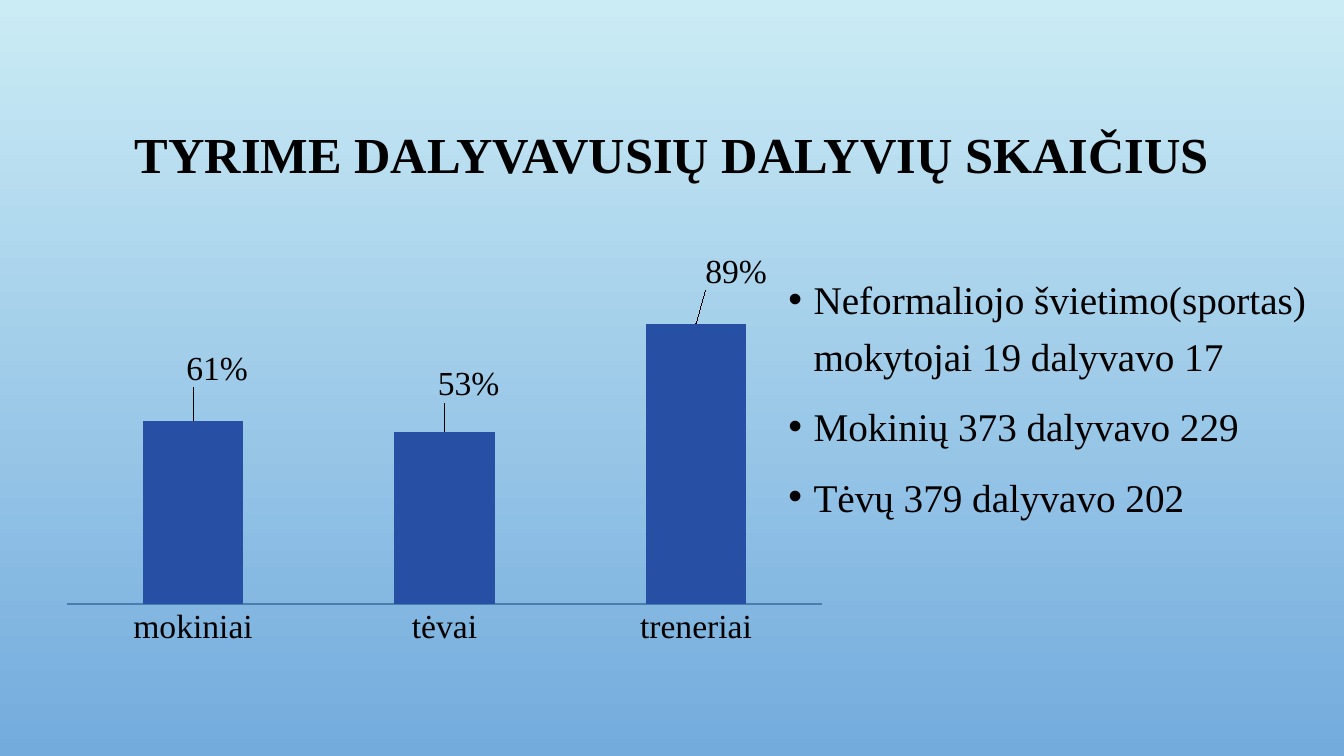
"""Build a slide with survey participation rates by group."""
from lxml import etree
from pptx import Presentation
from pptx.chart.data import CategoryChartData
from pptx.dml.color import RGBColor
from pptx.enum import chart as ch, text
from pptx.oxml import ns
from pptx.util import Inches, Pt

FONT = "Times New Roman"
COLORS = {"sky": "CBECF5", "blue": "73ABDD", "bar": "274FA4",
          "axis": "4A7EAE", "text": "000000"}
GROUPS = [("mokiniai", 0.51, "61%", (0.03, -0.06)),
          ("tėvai", 0.48, "53%", (0.03, -0.05)),
          ("treneriai", 0.78, "89%", (0.05, -0.06))]
COUNTS = ["Neformaliojo švietimo(sportas) mokytojai 19 dalyvavo 17",
          "Mokinių 373 dalyvavo 229",
          "Tėvų 379 dalyvavo 202"]


def rgb(name):
    return RGBColor.from_string(COLORS[name])


def style(font, size, bold=False):
    font.name, font.size, font.bold = FONT, Pt(size), bold
    font.color.rgb = rgb("text")


def paint_background(s):
    fill = s.background.fill
    fill.gradient()
    fill.gradient_angle = 270
    for stop, name in zip(fill.gradient_stops, ("sky", "blue")):
        stop.color.rgb = rgb(name)


def add_text(s, box, lines, size, bold=False):
    tf = s.shapes.add_textbox(*map(Inches, box)).text_frame
    tf.word_wrap = True
    tf.text = "\n".join(lines)
    for p in tf.paragraphs:
        for r in p.runs:
            style(r.font, size, bold)
    return tf


def add_title(s, title):
    tf = add_text(s, (1, 0.68, 11.33, 1.75), [title], 36, True)
    tf.vertical_anchor = text.MSO_ANCHOR.MIDDLE
    p = tf.paragraphs[0]
    p.alignment = text.PP_ALIGN.CENTER
    p.line_spacing = 0.9


def add_bullets(s, lines):
    tf = add_text(s, (7.72, 2.59, 5.51, 3.74), lines, 28)
    for i, p in enumerate(tf.paragraphs):
        p.line_spacing = 1.2
        p.space_before = Pt(10 if i else 0)
        pPr = p._p.get_or_add_pPr()
        pPr.set("marL", str(Inches(0.25)))
        pPr.set("indent", str(Inches(-0.25)))
        color = etree.SubElement(pPr, ns.qn("a:buClr"))
        etree.SubElement(color, ns.qn("a:srgbClr"), val=COLORS["text"])
        etree.SubElement(pPr, ns.qn("a:buFont"), typeface="Arial")
        etree.SubElement(pPr, ns.qn("a:buChar"), char="•")


def set_layout(parent, index, values):
    """Place a chart part by hand, replacing any earlier layout."""
    for old in parent.findall(ns.qn("c:layout")):
        parent.remove(old)
    layout = etree.Element(ns.qn("c:layout"))
    manual = etree.SubElement(layout, ns.qn("c:manualLayout"))
    for tag, val in values.items():
        etree.SubElement(manual, ns.qn(f"c:{tag}"), val=str(val))
    parent.insert(index, layout)


def add_rates_chart(s):
    data = CategoryChartData(number_format="0%")
    data.categories = [group[0] for group in GROUPS]
    data.add_series("Series 1", [group[1] for group in GROUPS])
    box = map(Inches, (0.51, 1.96, 7.96, 4.86))
    chart = s.shapes.add_chart(ch.XL_CHART_TYPE.COLUMN_CLUSTERED, *box, data).chart
    chart.has_legend = chart.has_title = False
    style(chart.font, 24)

    rates = chart.value_axis
    rates.minimum_scale, rates.maximum_scale = 0, 0.9
    rates.has_major_gridlines = rates.visible = False
    names = chart.category_axis
    names.major_tick_mark = ch.XL_TICK_MARK.NONE
    names.format.line.color.rgb = rgb("axis")
    names.format.line.width = Pt(0.75)

    plot = chart.plots[0]
    plot.gap_width, plot.vary_by_categories = 150, False
    series = plot.series[0]
    series.invert_if_negative = False
    series.format.fill.solid()
    series.format.fill.fore_color.rgb = rgb("bar")
    labels = series.data_labels
    labels.show_value = True
    labels.number_format, labels.number_format_is_linked = "0%", False
    labels.position = ch.XL_LABEL_POSITION.OUTSIDE_END
    for i, (_, _, rate, _) in enumerate(GROUPS):
        label = series.points[i].data_label
        label.text_frame.text = rate
        style(label.text_frame.paragraphs[0].runs[0].font, 24)
        label.position = ch.XL_LABEL_POSITION.OUTSIDE_END
    for label, group in zip(series._element.iter(ns.qn("c:dLbl")), GROUPS):
        set_layout(label, 1, dict(zip("xy", group[3])))
    area = chart._chartSpace.find(".//" + ns.qn("c:plotArea"))
    set_layout(area, 0, {"layoutTarget": "inner", "xMode": "edge", "yMode": "edge",
                         "x": 0.02, "y": 0.17, "w": 0.94, "h": 0.66})


def main():
    prs = Presentation()
    prs.slide_width, prs.slide_height = Inches(13.33), Inches(7.5)
    s = prs.slides.add_slide(prs.slide_layouts[6])
    paint_background(s)
    add_title(s, "TYRIME DALYVAVUSIŲ DALYVIŲ SKAIČIUS")
    add_rates_chart(s)
    add_bullets(s, COUNTS)
    prs.save("out.pptx")


if __name__ == "__main__":
    main()
